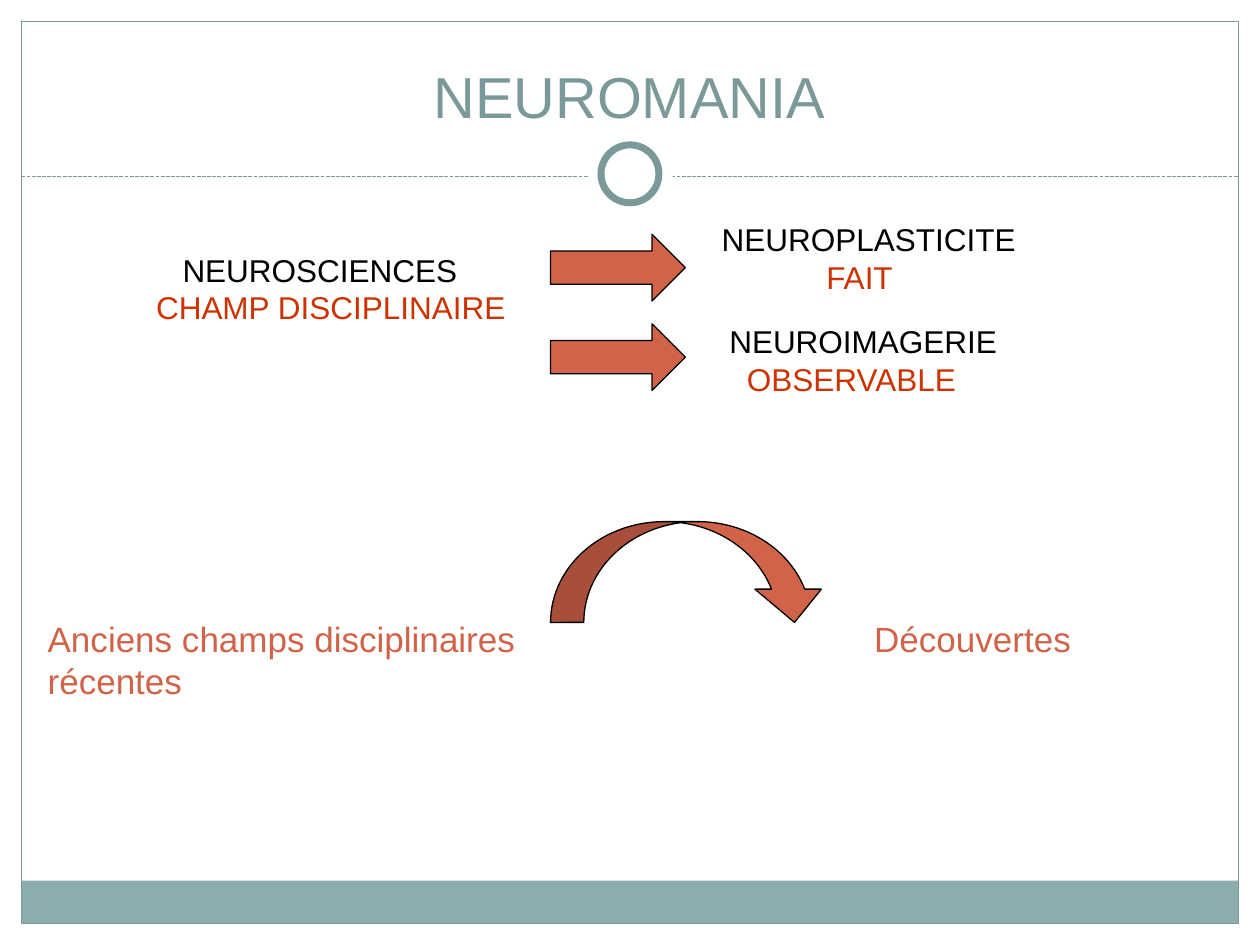
from dataclasses import dataclass

from lxml import etree
from pptx import Presentation
from pptx.dml.color import RGBColor
from pptx.enum import dml, shapes, text
from pptx.oxml.ns import qn
from pptx.util import Inches, Pt

WHITE = RGBColor(0xFF, 0xFF, 0xFF)
BLACK = RGBColor(0, 0, 0)
SAGE = RGBColor(0x7C, 0x99, 0x9A)
BAND = RGBColor(0x8C, 0xAD, 0xAE)
BRICK = RGBColor(0xD1, 0x63, 0x49)
RED = RGBColor(0xCC, 0x33, 0x00)
FONT = "Arial"
SHAPE = shapes.MSO_SHAPE


@dataclass
class Line:
    words: str
    color: RGBColor
    size: float = 18
    indent: float = 0
    tab: float = 0
    align: text.PP_ALIGN = text.PP_ALIGN.LEFT


@dataclass
class Label:
    left: float
    top: float
    width: float
    height: float
    lines: list[Line]
    anchor: text.MSO_ANCHOR = text.MSO_ANCHOR.TOP


@dataclass
class Figure:
    kind: SHAPE
    left: float
    top: float
    width: float
    height: float
    fill: RGBColor | None = None
    line: RGBColor | None = None
    weight: float = 0.75
    adjustments: tuple[float, ...] = ()


def draw_figure(page, figure: Figure) -> None:
    shape = page.shapes.add_shape(
        figure.kind, Inches(figure.left), Inches(figure.top),
        Inches(figure.width), Inches(figure.height))
    shape.shadow.inherit = False
    for index, value in enumerate(figure.adjustments):
        shape.adjustments[index] = value
    if figure.fill is None:
        shape.fill.background()
    else:
        shape.fill.solid()
        shape.fill.fore_color.rgb = figure.fill
    if figure.line is None:
        shape.line.fill.background()
    else:
        shape.line.color.rgb = figure.line
        shape.line.width = Pt(figure.weight)


def draw_divider(page, left: float, right: float, height: float) -> None:
    divider = page.shapes.add_connector(
        shapes.MSO_CONNECTOR.STRAIGHT, Inches(left), Inches(height),
        Inches(right), Inches(height))
    divider.line.color.rgb = SAGE
    divider.line.width = Pt(0.75)
    divider.line.dash_style = dml.MSO_LINE.SQUARE_DOT
    etree.SubElement(divider._element.spPr, qn("a:effectLst"))


def draw_label(page, label: Label) -> None:
    box = page.shapes.add_textbox(
        Inches(label.left), Inches(label.top),
        Inches(label.width), Inches(label.height))
    frame = box.text_frame
    frame.word_wrap = True
    frame.vertical_anchor = label.anchor
    for index, line in enumerate(label.lines):
        para = frame.add_paragraph() if index else frame.paragraphs[0]
        para.alignment = line.align
        properties = para._p.get_or_add_pPr()
        if line.indent:
            properties.set("marL", str(Inches(line.indent)))
        if line.tab:
            stops = etree.SubElement(properties, qn("a:tabLst"))
            etree.SubElement(stops, qn("a:tab"), pos=str(Inches(line.tab)), algn="l")
        span = para.add_run()
        span.text = line.words
        span.font.name = FONT
        span.font.size = Pt(line.size)
        span.font.color.rgb = line.color


FRAME = [
    Figure(SHAPE.RECTANGLE, 0.17, 6.99, 9.66, 0.34, BAND),
    Figure(SHAPE.RECTANGLE, 0.17, 0.17, 9.66, 7.16, line=SAGE),
]
RING = [
    Figure(SHAPE.OVAL, 4.67, 1.05, 0.67, 0.67, WHITE),
    Figure(SHAPE.OVAL, 4.77, 1.15, 0.46, 0.46, WHITE, SAGE, 4),
]
ARROWS = [
    Figure(SHAPE.RIGHT_ARROW, 4.37, top, 1.07, 0.53, BRICK, BLACK, adjustments=(0.5, 0.5))
    for top in (1.86, 2.57)
] + [
    Figure(SHAPE.CURVED_DOWN_ARROW, 4.37, 4.14, 2.2, 0.8, BRICK, BLACK,
           adjustments=(0.33, 0.66, 0.33)),
]
LABELS = [
    Label(0.33, 0.25, 9.33, 0.83,
          [Line("NEUROMANIA", SAGE, 33, align=text.PP_ALIGN.CENTER)],
          text.MSO_ANCHOR.BOTTOM),
    Label(1.14, 1.94, 3.15, 0.7,
          [Line("NEUROSCIENCES", BLACK, indent=0.21),
           Line("CHAMP DISCIPLINAIRE", RED)]),
    Label(5.63, 1.7, 2.8, 0.7,
          [Line("NEUROPLASTICITE", BLACK), Line("FAIT", RED, indent=0.83)]),
    Label(5.69, 2.51, 3.33, 0.7,
          [Line("NEUROIMAGERIE", BLACK), Line("OBSERVABLE", RED, indent=0.14)]),
    Label(0.28, 4.85, 9.3, 0.74,
          [Line("Anciens champs disciplinaires\tDécouvertes récentes", BRICK, 20, tab=6.56)]),
]


def main() -> None:
    deck = Presentation()
    deck.slide_width, deck.slide_height = Inches(10), Inches(7.5)
    page = deck.slides.add_slide(deck.slide_layouts[6])
    for figure in FRAME:
        draw_figure(page, figure)
    draw_divider(page, 0.17, 9.83, 1.4)
    for figure in RING + ARROWS:
        draw_figure(page, figure)
    for label in LABELS:
        draw_label(page, label)
    deck.save("out.pptx")


if __name__ == "__main__":
    main()
